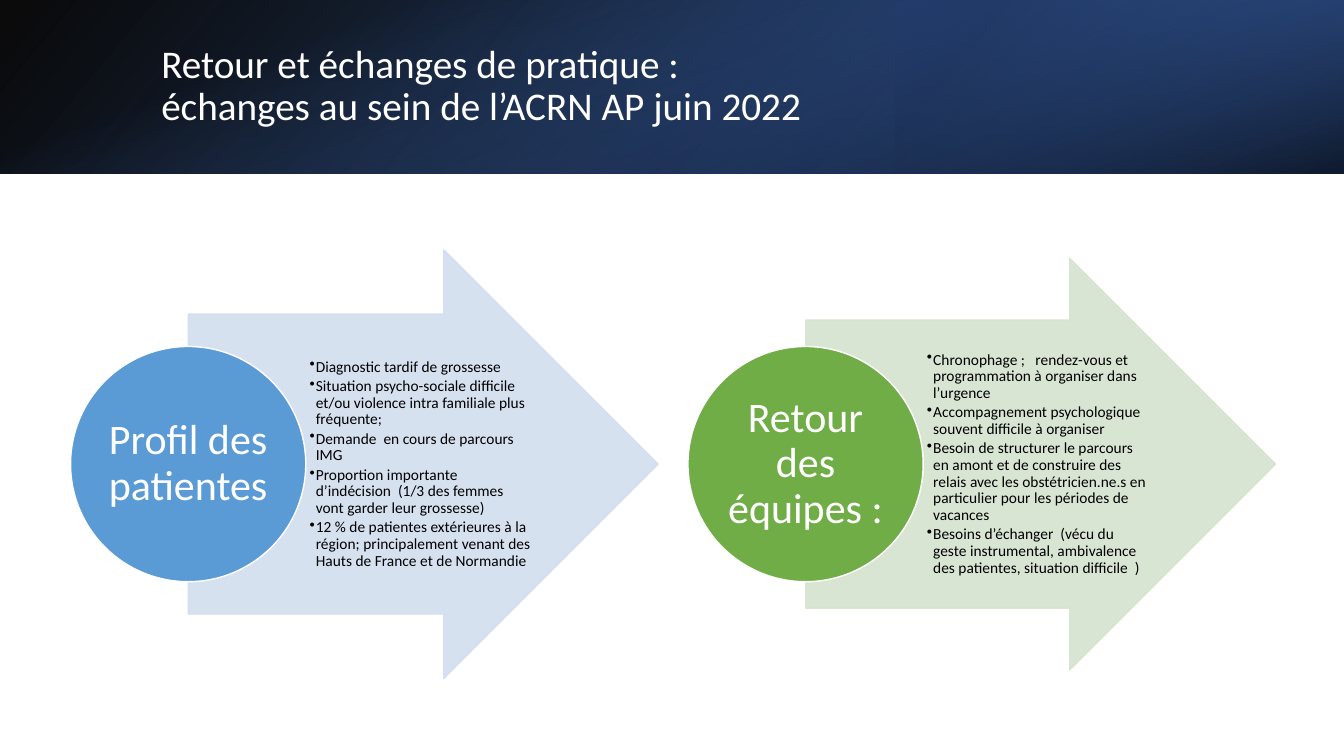
from lxml import etree
from pptx import Presentation
from pptx.dml.color import RGBColor
from pptx.enum.shapes import MSO_SHAPE
from pptx.enum.text import MSO_ANCHOR, MSO_AUTO_SIZE, PP_ALIGN
from pptx.oxml.ns import qn
from pptx.util import Pt

RECTANGLE, ARROW, OVAL = MSO_SHAPE.RECTANGLE, MSO_SHAPE.RIGHT_ARROW, MSO_SHAPE.OVAL
MIDDLE, NO_AUTOFIT = MSO_ANCHOR.MIDDLE, MSO_AUTO_SIZE.NONE
LEFT, CENTER = PP_ALIGN.LEFT, PP_ALIGN.CENTER

BLACK = RGBColor(0x00, 0x00, 0x00)
WHITE = RGBColor(0xFF, 0xFF, 0xFF)
NAVY = RGBColor(0x20, 0x38, 0x64)
DARK_BLUE = RGBColor(0x2F, 0x55, 0x97)
ROYAL_BLUE = RGBColor(0x44, 0x72, 0xC4)
BLUE = RGBColor(0x5B, 0x9B, 0xD5)
PALE_BLUE = RGBColor(0xD2, 0xDE, 0xEF)
GREEN = RGBColor(0x70, 0xAD, 0x47)
PALE_GREEN = RGBColor(0xD5, 0xE3, 0xCF)

FONT = "Calibri"
WIDTH, HEIGHT, BAND_HEIGHT = 960, 540, 124
CENTER_Y, COLUMN_STEP = 331.5, 441
CIRCLE_LEFT, CIRCLE_SIZE = 50.4, 168
ARROW_LEFT, ARROW_WIDTH = 134.6, 335.5
LIST_LEFT, LIST_WIDTH = 219, 163.4


def add_plain_shape(kind, left, top, width, height):
    shape = slide.shapes.add_shape(kind, Pt(left), Pt(top), Pt(width), Pt(height))
    shape.shadow.inherit = False
    return shape


def add_styled_run(paragraph, text, size, color):
    paragraph.line_spacing = 0.9
    run = paragraph.add_run()
    run.text = text
    run.font.name = FONT
    run.font.size = Pt(size)
    run.font.color.rgb = color


presentation = Presentation()
presentation.slide_width = Pt(WIDTH)
presentation.slide_height = Pt(HEIGHT)
slide = presentation.slides.add_slide(presentation.slide_layouts[5])
title = slide.shapes.title

band_layers = [
    (0, 0, WIDTH, BAND_HEIGHT, 0, True, 140, [(0, BLACK, 96), (100, DARK_BLUE, 100)]),
    (WIDTH * 2 / 3, 0, WIDTH / 3, BAND_HEIGHT, 180, True, 320,
     [(19, NAVY, 68), (100, ROYAL_BLUE, 79)]),
    ((WIDTH - BAND_HEIGHT) / 2, (BAND_HEIGHT - WIDTH) / 2, BAND_HEIGHT, WIDTH, 90, False, 340,
     [(23, ROYAL_BLUE, 0), (99, BLACK, 74)]),
]
for left, top, width, height, rotation, flipped, angle, stops in band_layers:
    layer = add_plain_shape(RECTANGLE, left, top, width, height)
    layer.rotation = rotation
    layer.line.fill.background()
    layer.fill.gradient()
    properties = layer._element.spPr
    if flipped:
        properties.find(qn("a:xfrm")).set("flipH", "1")
    gradient = properties.find(qn("a:gradFill"))
    gradient.set("rotWithShape", "1")
    gradient.find(qn("a:lin")).set("ang", str(angle * 60000))
    stop_list = gradient.find(qn("a:gsLst"))
    for default_stop in list(stop_list):
        stop_list.remove(default_stop)
    for position, color, opacity in stops:
        stop = etree.SubElement(stop_list, qn("a:gs"), pos=str(position * 1000))
        stop_color = etree.SubElement(stop, qn("a:srgbClr"), val=str(color))
        etree.SubElement(stop_color, qn("a:alpha"), val=str(opacity * 1000))

title.left, title.top, title.width, title.height = Pt(108), Pt(27.4), Pt(790.5), Pt(69)
title.text_frame.word_wrap = True
title.text_frame.auto_size = NO_AUTOFIT
title.text_frame.vertical_anchor = MIDDLE
title_paragraph = title.text_frame.paragraphs[0]
title_paragraph.alignment = LEFT
add_styled_run(title_paragraph, "Retour et échanges de pratique :", 28, WHITE)
title_paragraph.add_line_break()
add_styled_run(title_paragraph, "échanges au sein de l’ACRN AP juin 2022", 28, WHITE)
slide.shapes._spTree.append(title._element)

columns = [
    ("Profil des patientes", BLUE, PALE_BLUE, 306, [
        "Diagnostic tardif de grossesse",
        "Situation psycho-sociale difficile et/ou violence intra familiale plus fréquente;",
        "Demande  en cours de parcours IMG",
        "Proportion importante d’indécision  (1/3 des femmes vont garder leur grossesse)",
        "12 % de patientes extérieures à la région; principalement venant des Hauts de France "
        "et de Normandie",
    ]),
    ("Retour des équipes :", GREEN, PALE_GREEN, 294, [
        "Chronophage ;   rendez-vous et programmation à organiser dans l’urgence",
        "Accompagnement psychologique  souvent difficile à organiser",
        "Besoin de structurer le parcours  en amont et de construire des relais avec les "
        "obstétricien.ne.s en particulier pour les périodes de vacances",
        "Besoins d’échanger  (vécu du geste instrumental, ambivalence des patientes, "
        "situation difficile  )",
    ]),
]
for index, (heading, color, pale_color, arrow_height, points) in enumerate(columns):
    offset = index * COLUMN_STEP
    arrow = add_plain_shape(ARROW, ARROW_LEFT + offset, CENTER_Y - arrow_height / 2,
                            ARROW_WIDTH, arrow_height)
    arrow.adjustments[0] = 0.7
    arrow.adjustments[1] = 0.5
    arrow.line.width = Pt(1)
    for fill in (arrow.fill, arrow.line.fill):
        fill.solid()
        fill.fore_color.rgb = pale_color
    for arrow_color in arrow._element.spPr.iter(qn("a:srgbClr")):
        etree.SubElement(arrow_color, qn("a:alpha"), val="90000")

    list_height = arrow_height * 0.7
    point_list = slide.shapes.add_textbox(Pt(LIST_LEFT + offset), Pt(CENTER_Y - list_height / 2),
                                          Pt(LIST_WIDTH), Pt(list_height))
    frame = point_list.text_frame
    frame.word_wrap = True
    frame.vertical_anchor = MIDDLE
    frame.margin_left, frame.margin_right = Pt(2.1), Pt(1.4)
    frame.margin_top = frame.margin_bottom = Pt(0.7)
    for number, point in enumerate(points):
        paragraph = frame.add_paragraph() if number else frame.paragraphs[0]
        paragraph.space_after = Pt(2)
        add_styled_run(paragraph, point, 11, BLACK)
        paragraph_properties = paragraph._p.get_or_add_pPr()
        paragraph_properties.set("marL", str(Pt(4.5)))
        paragraph_properties.set("indent", str(Pt(-4.5)))
        etree.SubElement(paragraph_properties, qn("a:buChar"), char="•")

    circle = add_plain_shape(OVAL, CIRCLE_LEFT + offset, CENTER_Y - CIRCLE_SIZE / 2,
                             CIRCLE_SIZE, CIRCLE_SIZE)
    circle.fill.solid()
    circle.fill.fore_color.rgb = color
    circle.line.color.rgb = WHITE
    circle.line.width = Pt(1)
    frame = circle.text_frame
    frame.word_wrap = True
    frame.vertical_anchor = MIDDLE
    frame.margin_left = frame.margin_right = frame.margin_top = frame.margin_bottom = Pt(1.5)
    frame.paragraphs[0].alignment = CENTER
    add_styled_run(frame.paragraphs[0], heading, 30, WHITE)

presentation.save("out.pptx")
